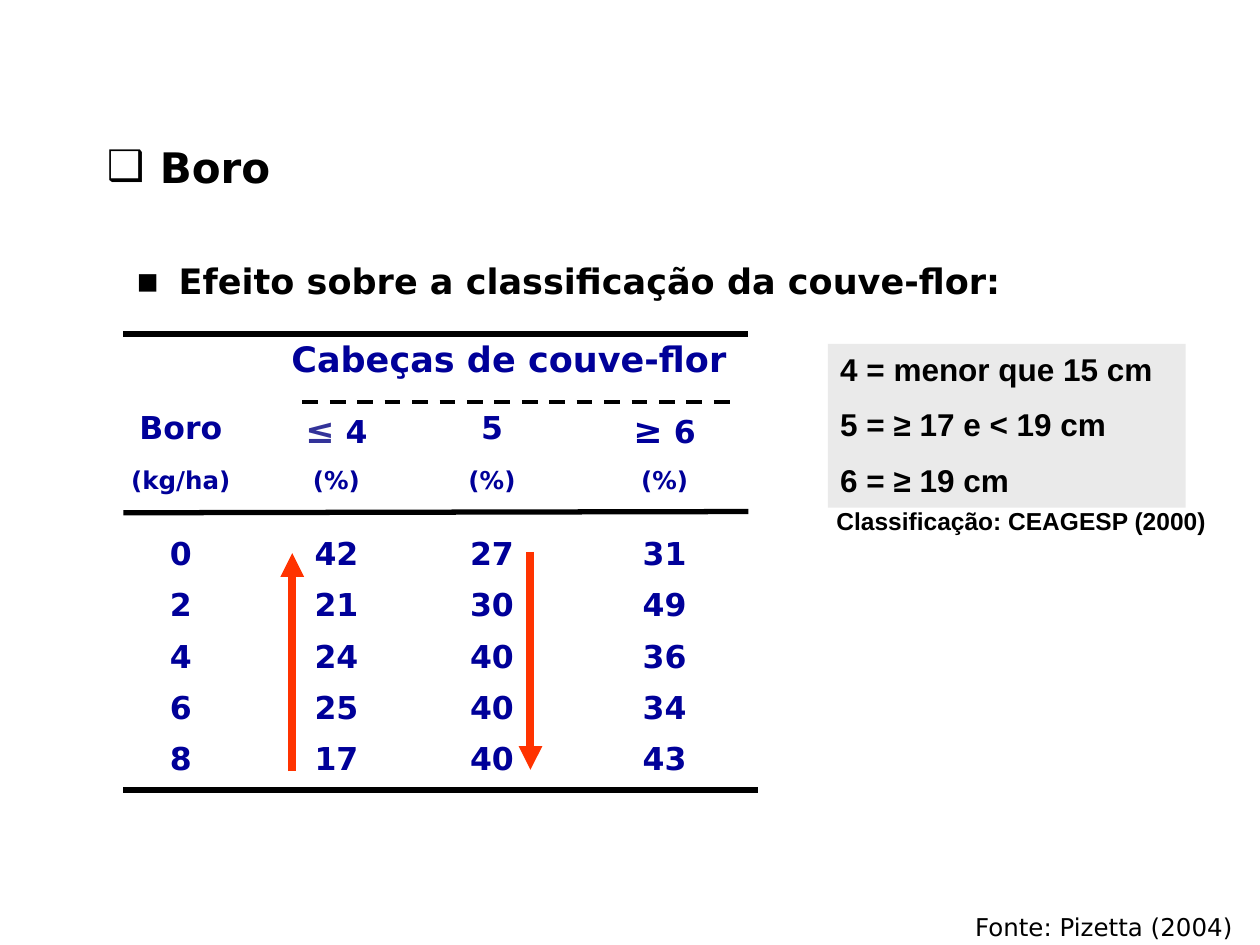
from dataclasses import dataclass
from typing import Optional

import pptx
import pptx.dml.color
import pptx.enum.dml
import pptx.enum.shapes
import pptx.enum.text
import pptx.oxml.ns
import pptx.util
from lxml import etree

Inches = pptx.util.Inches
RGBColor = pptx.dml.color.RGBColor
Align = pptx.enum.text.PP_ALIGN
Anchor = pptx.enum.text.MSO_ANCHOR
Dash = pptx.enum.dml.MSO_LINE

BLACK = RGBColor(0x00, 0x00, 0x00)
NAVY = RGBColor(0x00, 0x00, 0x99)
INDIGO = RGBColor(0x33, 0x33, 0x99)
ORANGE = RGBColor(0xFF, 0x33, 0x00)
GREY = RGBColor(0xEA, 0xEA, 0xEA)
SANS = "DejaVu Sans"
ARIAL = "Arial"


@dataclass
class Span:
    text: str
    size: float
    color: RGBColor = NAVY


@dataclass
class Label:
    text: str
    left: float
    top: float
    width: float
    height: float
    size: float
    font: str = SANS
    bold: bool = True
    align: Align = Align.LEFT
    anchor: Anchor = Anchor.MIDDLE
    line_spacing: float = 1.0
    bullet: str = ""
    indent: float = 0


@dataclass
class Rule:
    x1: float
    y1: float
    x2: float
    y2: float
    weight: float = 3
    color: RGBColor = BLACK
    dash: Optional[Dash] = None
    arrow: bool = False


LABELS = [
    Label("Fonte: Pizetta (2004)", 7.64, 7.15, 2.36, 0.37, 14, bold=False,
          align=Align.JUSTIFY, line_spacing=1.15),
    Label("Boro", 0.75, 1.07, 1.6, 0.5, 24, bullet="❑", indent=0.42),
    Label("Classificação: CEAGESP (2000)", 6.54, 3.97, 3.5, 0.33, 14,
          font=ARIAL, anchor=Anchor.TOP),
    Label("Efeito sobre a classificação da couve-flor:", 0.98, 1.94, 8.58, 0.5, 20,
          align=Align.JUSTIFY, line_spacing=1.2, bullet="▪", indent=0.34),
]
RULES = [
    Rule(0.98, 2.65, 5.94, 2.65),
    Rule(2.4, 3.19, 5.79, 3.19, weight=2.25, dash=Dash.DASH),
    Rule(0.98, 4.07, 5.94, 4.06),
    Rule(0.98, 6.27, 6.02, 6.27),
    Rule(2.32, 6.12, 2.32, 4.39, weight=4.5, color=ORANGE, arrow=True),
    Rule(4.21, 4.38, 4.21, 6.11, weight=4.5, color=ORANGE, arrow=True),
]
CLASSES = ["4 = menor que 15 cm", "5 = ≥ 17 e < 19 cm", "6 = ≥ 19 cm"]

COLUMN_WIDTHS = [1.23, 1.24, 1.23, 1.51, 3.23]
ROW_HEIGHTS = [0.56, 0.44, 0.56] + [0.4] * 5
HEADINGS = [
    [[], [Span("Cabeças de couve-flor", 20)]],
    [[Span("Boro", 18)], [Span("≤", 20, INDIGO), Span(" 4", 18)],
     [Span("5", 18)], [Span("≥", 20), Span(" 6", 18)]],
    [[Span(text, 14)] for text in ["(kg/ha)", "(%)", "(%)", "(%)"]],
]
RESULTS = [
    (0, 42, 27, 31),
    (2, 21, 30, 49),
    (4, 24, 40, 36),
    (6, 25, 40, 34),
    (8, 17, 40, 43),
]


def format_span(span, size: float, color: RGBColor, font: str, bold: bool) -> None:
    span.font.size = pptx.util.Pt(size)
    span.font.color.rgb = color
    span.font.name = font
    span.font.bold = bold


def add_bullet(para, character: str, indent: float) -> None:
    properties = para._p.get_or_add_pPr()
    properties.set("marL", str(Inches(indent)))
    properties.set("indent", str(-Inches(indent)))
    font = etree.SubElement(properties, pptx.oxml.ns.qn("a:buFont"))
    font.set("typeface", SANS)
    bullet = etree.SubElement(properties, pptx.oxml.ns.qn("a:buChar"))
    bullet.set("char", character)


def draw_label(page, label: Label) -> None:
    box = page.shapes.add_textbox(Inches(label.left), Inches(label.top),
                                  Inches(label.width), Inches(label.height))
    frame = box.text_frame
    frame.word_wrap = True
    frame.vertical_anchor = label.anchor
    frame.text = label.text
    para = frame.paragraphs[0]
    if label.bullet:
        add_bullet(para, label.bullet, label.indent)
    para.alignment = label.align
    para.line_spacing = label.line_spacing
    format_span(para.runs[0], label.size, BLACK, label.font, label.bold)


def draw_rule(page, rule: Rule) -> None:
    connector = page.shapes.add_connector(
        pptx.enum.shapes.MSO_CONNECTOR.STRAIGHT,
        Inches(rule.x1), Inches(rule.y1), Inches(rule.x2), Inches(rule.y2))
    connector.line.color.rgb = rule.color
    connector.line.width = pptx.util.Pt(rule.weight)
    if rule.dash is not None:
        connector.line.dash_style = rule.dash
    if rule.arrow:
        outline = connector.line._get_or_add_ln()
        etree.SubElement(outline, pptx.oxml.ns.qn("a:tailEnd")).set("type", "triangle")
    etree.SubElement(connector._element.spPr, pptx.oxml.ns.qn("a:effectLst"))


def fill_cell(cell, spans: list[Span]) -> None:
    para = cell.text_frame.paragraphs[0]
    para.alignment = Align.CENTER
    for span in spans:
        added = para.add_run()
        added.text = span.text
        format_span(added, span.size, span.color, SANS, True)


def draw_table(page) -> None:
    frame = page.shapes.add_table(
        len(ROW_HEIGHTS), len(COLUMN_WIDTHS), Inches(0.82), Inches(2.65),
        Inches(sum(COLUMN_WIDTHS)), Inches(sum(ROW_HEIGHTS)))
    table = frame.table
    table.first_row = False
    table.horz_banding = False
    for column, width in zip(table.columns, COLUMN_WIDTHS):
        column.width = Inches(width)
    for row, height in zip(table.rows, ROW_HEIGHTS):
        row.height = Inches(height)
    for cell in table.iter_cells():
        cell.fill.background()
    table.cell(0, 1).merge(table.cell(0, 3))
    body = [[[Span(str(value), 18)] for value in values] for values in RESULTS]
    for row_index, row_spans in enumerate(HEADINGS + body):
        for column_index, spans in enumerate(row_spans):
            fill_cell(table.cell(row_index, column_index), spans)


def draw_classes(page) -> None:
    box = page.shapes.add_shape(pptx.enum.shapes.MSO_SHAPE.RECTANGLE,
                                Inches(6.57), Inches(2.73), Inches(2.84), Inches(1.3))
    box.shadow.inherit = False
    box.fill.solid()
    box.fill.fore_color.rgb = GREY
    box.line.fill.background()
    frame = box.text_frame
    frame.word_wrap = True
    frame.vertical_anchor = Anchor.TOP
    frame.text = "\n".join(CLASSES)
    for index, para in enumerate(frame.paragraphs):
        para.alignment = Align.LEFT
        if index:
            para.space_before = pptx.util.Pt(10)
        format_span(para.runs[0], 18, BLACK, ARIAL, True)


def main() -> None:
    deck = pptx.Presentation()
    deck.slide_width = Inches(10)
    deck.slide_height = Inches(7.5)
    page = deck.slides.add_slide(deck.slide_layouts[6])
    draw_table(page)
    for label in LABELS:
        draw_label(page, label)
    for rule in RULES:
        draw_rule(page, rule)
    draw_classes(page)
    deck.save("out.pptx")


if __name__ == "__main__":
    main()
